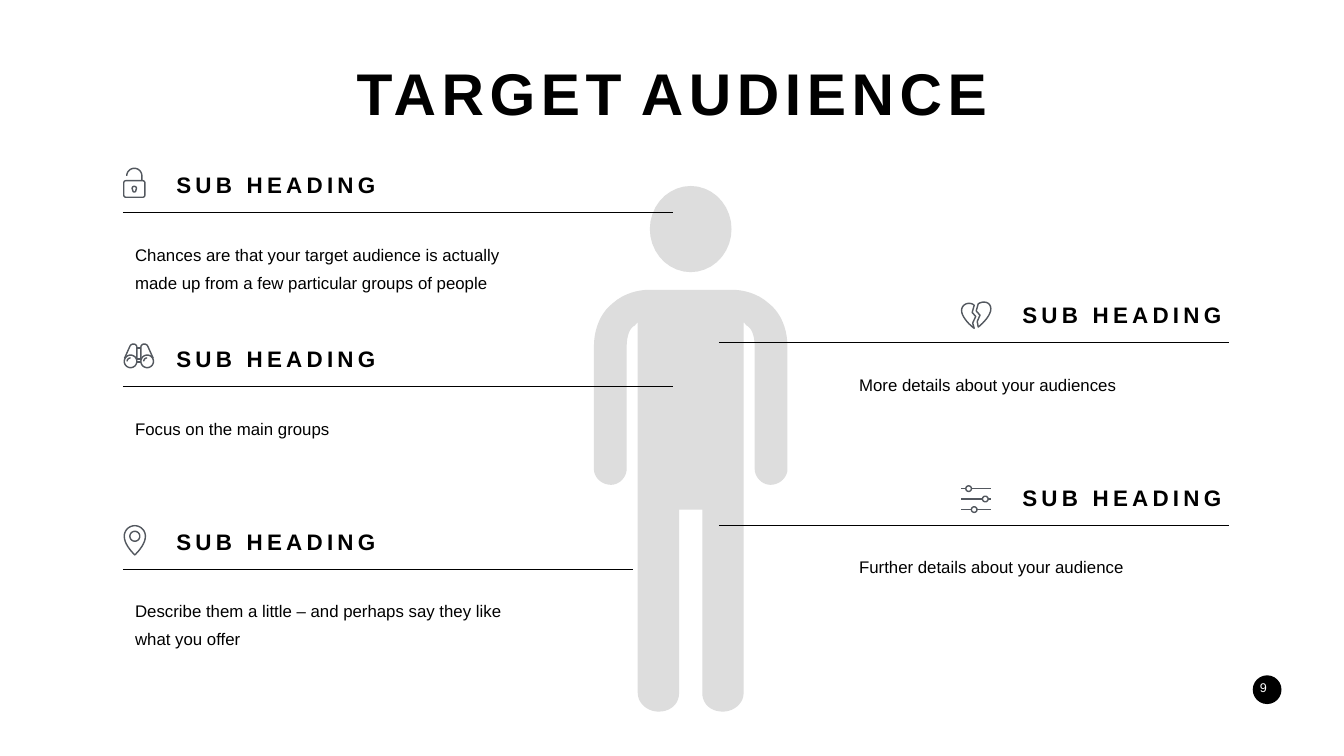
from dataclasses import dataclass
from math import cos, radians, sin

from lxml.etree import SubElement
from pptx import Presentation
from pptx.dml.color import RGBColor as RGB
from pptx.enum.shapes import MSO_CONNECTOR as CONN, MSO_SHAPE as SHAPE
from pptx.enum.text import MSO_AUTO_SIZE as FIT, PP_ALIGN as ALIGN
from pptx.oxml.ns import qn
from pptx.util import Inches, Pt


@dataclass(frozen=True)
class Theme:
    font: str = "Arial"
    ink: str = "000000"
    paper: str = "FFFFFF"
    figure: str = "DDDDDD"
    icon: str = "53585F"
    title: int = 84
    title_gap: int = 40
    heading: int = 32
    body: int = 24
    number: int = 18
    leading: float = 40.4
    rule: float = 0.75
    stroke: float = 2


def apply(obj, fmt):
    for name, value in fmt.items():
        setattr(obj, name, value)


def arc(cx, cy, rx, start=0, end=360, ry=None, step=10):
    """Points of an arc, in degrees clockwise from the right."""
    ry = ry or rx
    return [(cx + rx * cos(radians(a)), cy + ry * sin(radians(a)))
            for a in range(start, end + 1, step)]


def trace(*parts, steps=10):
    """Points of an outline: a pair is a corner, six numbers are a cubic curve."""
    points = []
    for part in parts:
        if len(part) == 2:
            points.append(part)
            continue
        ends = [points[-1], part[:2], part[2:4], part[4:]]
        for i in range(1, steps + 1):
            t = i / steps
            weights = ((1 - t) ** 3, 3 * t * (1 - t) ** 2, 3 * t * t * (1 - t), t ** 3)
            points.append(tuple(sum(w * p[axis] for w, p in zip(weights, ends))
                                for axis in (0, 1)))
    return points


def closed(points):
    return points + points[:1]


def mirror(points, width):
    return [(width - x, y) for x, y in reversed(points)]


class Deck:
    """Style and current slide; lengths are percentages of the slide's size."""

    def __init__(self, prs, theme):
        self.prs, self.theme = prs, theme
        self.s = prs.slides.add_slide(prs.slide_layouts[6])

    def x(self, share):
        return round(self.prs.slide_width * share / 100)

    def y(self, share):
        return round(self.prs.slide_height * share / 100)

    def box(self, left, top, width, height):
        return self.x(left), self.y(top), self.x(width), self.y(height)

    def paint(self, sp, color):
        sp.shadow.inherit = False
        sp.fill.solid()
        sp.fill.fore_color.rgb = RGB.from_string(color)
        sp.line.fill.background()

    def text(self, box, runs, color, bold=False, tracking=0, wrap=True,
             insets=(0.1, 0.05, 0.1, 0.05), **paragraph):
        """Add a text box; runs are (text, size) pairs."""
        tf = self.s.shapes.add_textbox(*self.box(*box)).text_frame
        sides = ("margin_left", "margin_top", "margin_right", "margin_bottom")
        apply(tf, dict(zip(sides, map(Inches, insets))))
        apply(tf, {"word_wrap": wrap, "auto_size": FIT.SHAPE_TO_FIT_TEXT})
        p = tf.paragraphs[0]
        apply(p, paragraph)
        for words, size in runs:
            r = p.add_run()
            r.text = words
            apply(r.font, {"name": self.theme.font, "size": Pt(size), "bold": bold})
            r.font.color.rgb = RGB.from_string(color)
            if tracking:
                r.font._element.set("spc", str(tracking * 100))

    def rule(self, left, right, top):
        line = self.s.shapes.add_connector(
            CONN.STRAIGHT, self.x(left), self.y(top), self.x(right), self.y(top))
        line.line.width = Pt(self.theme.rule)
        line.line.color.rgb = RGB.from_string(self.theme.ink)
        SubElement(line._element.spPr, qn("a:effectLst"))

    def outline(self, left, top, contours):
        """Add one freeform; contour points are hundredths of an inch."""
        fb = None
        for contour in contours:
            points = [(x * 10, y * 10) for x, y in contour]
            if fb is None:
                fb = self.s.shapes.build_freeform(*points[0], scale=Inches(1) / 1000)
            else:
                fb.move_to(*points[0])
            fb.add_line_segments(points[1:], close=False)
        return fb.convert_to_shape(self.x(left), self.y(top))

    def silhouette(self, left, top, contours):
        self.paint(self.outline(left, top, contours), self.theme.figure)

    def icon(self, left, top, strokes):
        sp = self.outline(left, top, strokes)
        sp.shadow.inherit = False
        sp.fill.background()
        sp.line.width = Pt(self.theme.stroke)
        sp.line.color.rgb = RGB.from_string(self.theme.icon)

    def section(self, side, top, rule_end, icon, icon_rise, body, body_height):
        t = self.theme
        self.text((side["heading"], top - 5.8, 15.72, 7.87),
                  [("SUB HEADING", t.heading)], t.ink, bold=True, tracking=6, wrap=False)
        self.rule(side["rule"], rule_end, top)
        self.text((side["body"], top + 2.33, side["width"], body_height),
                  [(body, t.body)], t.ink, insets=(0.24, 0.12, 0.24, 0.12),
                  line_spacing=Pt(t.leading))
        self.icon(side["icon"], top - icon_rise, icon)

    def page_number(self, number):
        t = self.theme
        self.paint(self.s.shapes.add_shape(
            SHAPE.OVAL, *self.box(93.21, 89.33, 2.14, 3.8)), t.ink)
        self.text((92.61, 89.33, 3.3, 3.33), [(number, t.number)], t.paper,
                  insets=(0.2, 0.1, 0.34, 0.1), alignment=ALIGN.CENTER)


def person():
    half = trace(
        (111, 206), (104, 206, 67, 206, 37, 233), (14, 251, 0, 282, 0, 320),
        (0, 562), (0, 577, 14, 593, 34, 593), (51, 593, 65, 577, 65, 562),
        (65, 320), (65, 297, 71, 282, 81, 277), (85, 273, 85, 271, 87, 271),
        (87, 1006), (87, 1028, 108, 1043, 128, 1043),
        (152, 1043, 169, 1028, 169, 1006), (169, 642))
    return [closed(half + mirror(half, 384)), arc(192, 85.5, 81, ry=85.5)]


def padlock():
    body = (arc(6, 31, 4.5, 180, 270) + arc(39, 31, 4.5, 270, 360)
            + arc(39, 55, 4.5, 0, 90) + arc(6, 55, 4.5, 90, 180))
    shackle = arc(22.5, 17, 15, 180, 360) + [(37.5, 26.5)]
    keyhole = arc(22.5, 42, 4.3, 180, 360) + arc(22.5, 46, 3, 0, 180)
    return [closed(body), shackle, closed(keyhole)]


def binoculars():
    barrel = trace((3, 30), (14, 5.5), (18, -1, 27.5, 1, 27.5, 8), (27.5, 30))
    strokes = [barrel, mirror(barrel, 63)]
    for cx in (15, 48):
        strokes += [arc(cx, 36, 12.5), arc(cx, 36, 6.8, 180, 270)]
    return strokes + [[(27.5, y), (35.5, y)] for y in (9.5, 31.5, 37.5)]


def pin():
    drop = arc(23.5, 22, 21, 180, 360) + [(44.5, 22)]
    tail = trace((44.5, 22), (44.5, 40, 23.5, 59, 23.5, 59), (23.5, 59, 2.5, 40, 2.5, 22))
    return [drop + tail, arc(23.5, 22, 9.8)]


def broken_heart():
    left = trace((26.5, 8), (24, 5, 20, 4, 16, 4), (8, 4, 1.5, 10, 1.5, 18.5),
                 (1.5, 32, 21, 50, 26.5, 53.5), (23.5, 43), (29.5, 30), (22.5, 22))
    right = trace((34.5, 5), (38, 2.5, 42, 1.5, 46, 1.5), (54, 1.5, 59.5, 7, 59.5, 15),
                  (59.5, 29, 41, 46, 34.5, 51), (32.5, 40), (38, 27.5), (30.5, 19))
    return [closed(left), closed(right)]


def sliders():
    strokes = []
    for knob, y in ((15.5, 7.5), (48.5, 28), (26.5, 49)):
        strokes += [[(1, y), (knob - 5.5, y)], arc(knob, y, 5.5), [(knob + 5.5, y), (60, y)]]
    return strokes


def main():
    prs = Presentation()
    apply(prs, {"slide_width": Inches(26.66), "slide_height": Inches(15)})
    t = Theme()
    deck = Deck(prs, t)
    left = {"rule": 9.15, "icon": 9.15, "heading": 12.75, "body": 9.15, "width": 29.22}
    right = {"rule": 53.49, "icon": 71.49, "heading": 75.69, "body": 63.02, "width": 28.36}

    deck.page_number("9")
    deck.silhouette(44.19, 24.6, person())
    for section in (
        (left, 28.13, 50.08, padlock(), 6, "Chances are that your target audience is "
         "actually made up from a few particular groups of people", 9.07),
        (left, 51.13, 50.08, binoculars(), 5.73, "Focus on the main groups", 4.93),
        (left, 75.27, 47.07, pin(), 5.8, "Describe them a little – and perhaps say "
         "they like what you offer", 8.67),
        (right, 45.33, 91.41, broken_heart(), 5.47, "More details about your audiences", 4.93),
        (right, 69.47, 91.41, sliders(), 5.33, "Further details about your audience", 4.93),
    ):
        deck.section(*section)
    deck.text((25.92, 7.2, 48.16, 10.07),
              [("TARGET", t.title), (" ", t.title_gap), ("AUDIENCE", t.title)],
              t.ink, bold=True, tracking=8, wrap=False, alignment=ALIGN.CENTER)
    prs.save("out.pptx")


if __name__ == "__main__":
    main()
